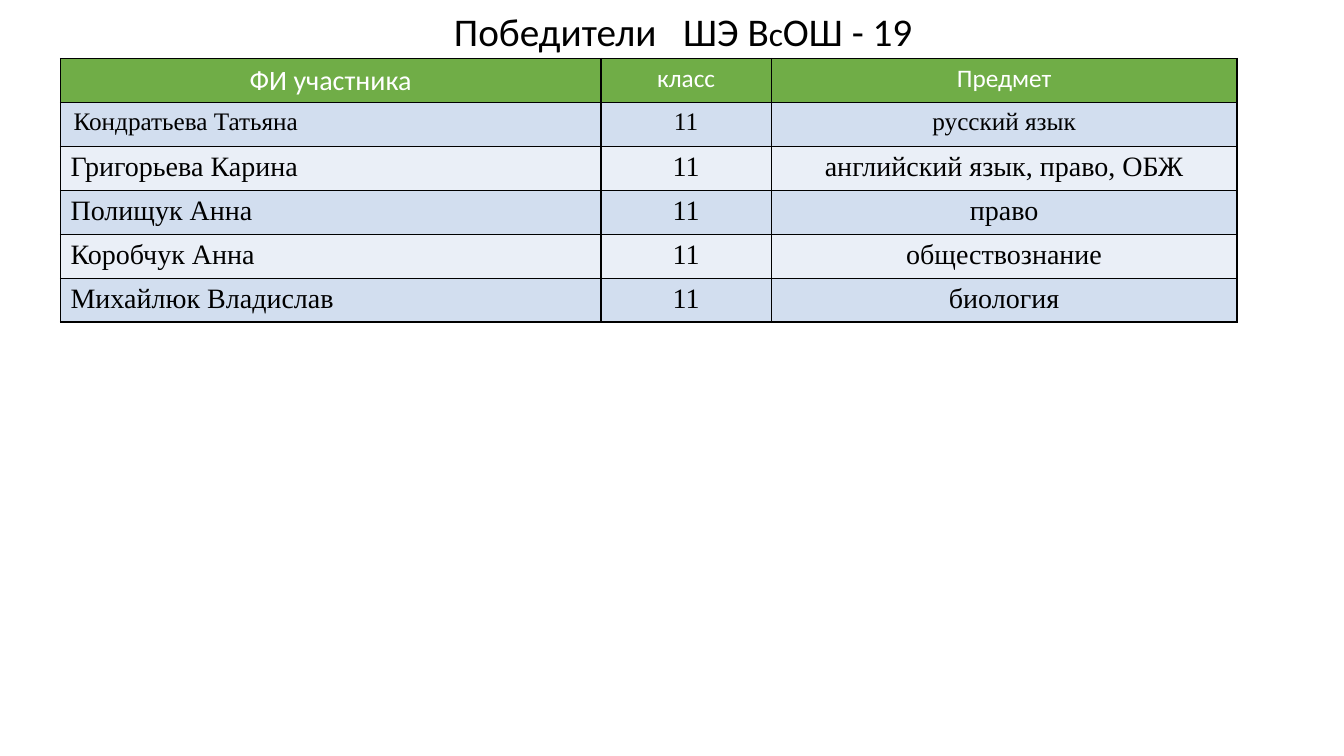
from lxml.etree import SubElement
from pptx import Presentation
from pptx.dml.color import RGBColor
from pptx.enum.text import MSO_ANCHOR, PP_ALIGN
from pptx.oxml.ns import qn
from pptx.util import Inches, Pt

# text, size, extra letter spacing in points
TITLE = [("Победители", 28, 0), (" ", 28, 12.7), ("ШЭ В", 28, 0),
         ("с", 24, 0), ("ОШ - 19", 28, 0)]
HEAD = ("ФИ участника", "класс", "Предмет")
WINNERS = [
    ("Кондратьева Татьяна", "11", "русский язык"),
    ("Григорьева Карина", "11", "английский язык, право, ОБЖ"),
    ("Полищук Анна", "11", "право"),
    ("Коробчук Анна", "11", "обществознание"),
    ("Михайлюк Владислав", "11", "биология"),
]
WIDTHS = (5.36, 1.69, 4.62)
HEIGHT = 2.61
COLORS = {"head": "70AD47", "odd": "D2DEEF", "even": "EAEFF7",
          "text": "000000", "white": "FFFFFF", "line": "000000"}


def color(name):
    return RGBColor.from_string(COLORS[name])


def style(font, face, size, name):
    font.name, font.size, font.bold = face, Pt(size), False
    font.color.rgb = color(name)


def border(cell):
    props = cell._tc.get_or_add_tcPr()
    for i, side in enumerate(("a:lnL", "a:lnR", "a:lnT", "a:lnB")):
        line = props.makeelement(qn(side), {"w": str(Pt(1))})
        fill = SubElement(line, qn("a:solidFill"))
        SubElement(fill, qn("a:srgbClr"), val=COLORS["line"])
        props.insert(i, line)


def add_title(slide):
    title = slide.shapes.title
    title.left, title.top = Inches(0.44), Inches(0)
    title.width, title.height = Inches(12.67), Inches(0.67)
    frame = title.text_frame
    frame.vertical_anchor = MSO_ANCHOR.MIDDLE
    para = frame.paragraphs[0]
    para.alignment, para.line_spacing = PP_ALIGN.CENTER, 0.9
    for text, size, gap in TITLE:
        run = para.add_run()
        run.text = text
        style(run.font, "Calibri", size, "text")
        if gap:
            run._r.get_or_add_rPr().set("spc", str(round(gap * 100)))


def add_winners(slide):
    rows = [HEAD] + WINNERS
    table = slide.shapes.add_table(
        len(rows), len(HEAD), Inches(0.6), Inches(0.58),
        Inches(sum(WIDTHS)), Inches(HEIGHT)).table
    for col, width in zip(table.columns, WIDTHS):
        col.width = Inches(width)
    for r, row in enumerate(rows):
        table.rows[r].height = Inches(HEIGHT / len(rows))
        fill = "head" if r == 0 else "odd" if r % 2 else "even"
        face = "Times New Roman" if r else "Calibri"
        for c, text in enumerate(row):
            cell = table.cell(r, c)
            cell.text = text
            cell.margin_left = cell.margin_right = Inches(0.13 if r < 2 else 0.1)
            cell.margin_top = cell.margin_bottom = Inches(0.05)
            cell.fill.solid()
            cell.fill.fore_color.rgb = color(fill)
            border(cell)
            para = cell.text_frame.paragraphs[0]
            para.alignment = PP_ALIGN.LEFT if r and c == 0 else PP_ALIGN.CENTER
            size = 20 if r > 1 or r == c == 0 else 18
            style(para.font, face, size, "text" if r else "white")


def main():
    deck = Presentation()
    deck.slide_width, deck.slide_height = Inches(13.33), Inches(7.5)
    slide = deck.slides.add_slide(deck.slide_layouts[5])
    add_title(slide)
    add_winners(slide)
    deck.save("out.pptx")


if __name__ == "__main__":
    main()
